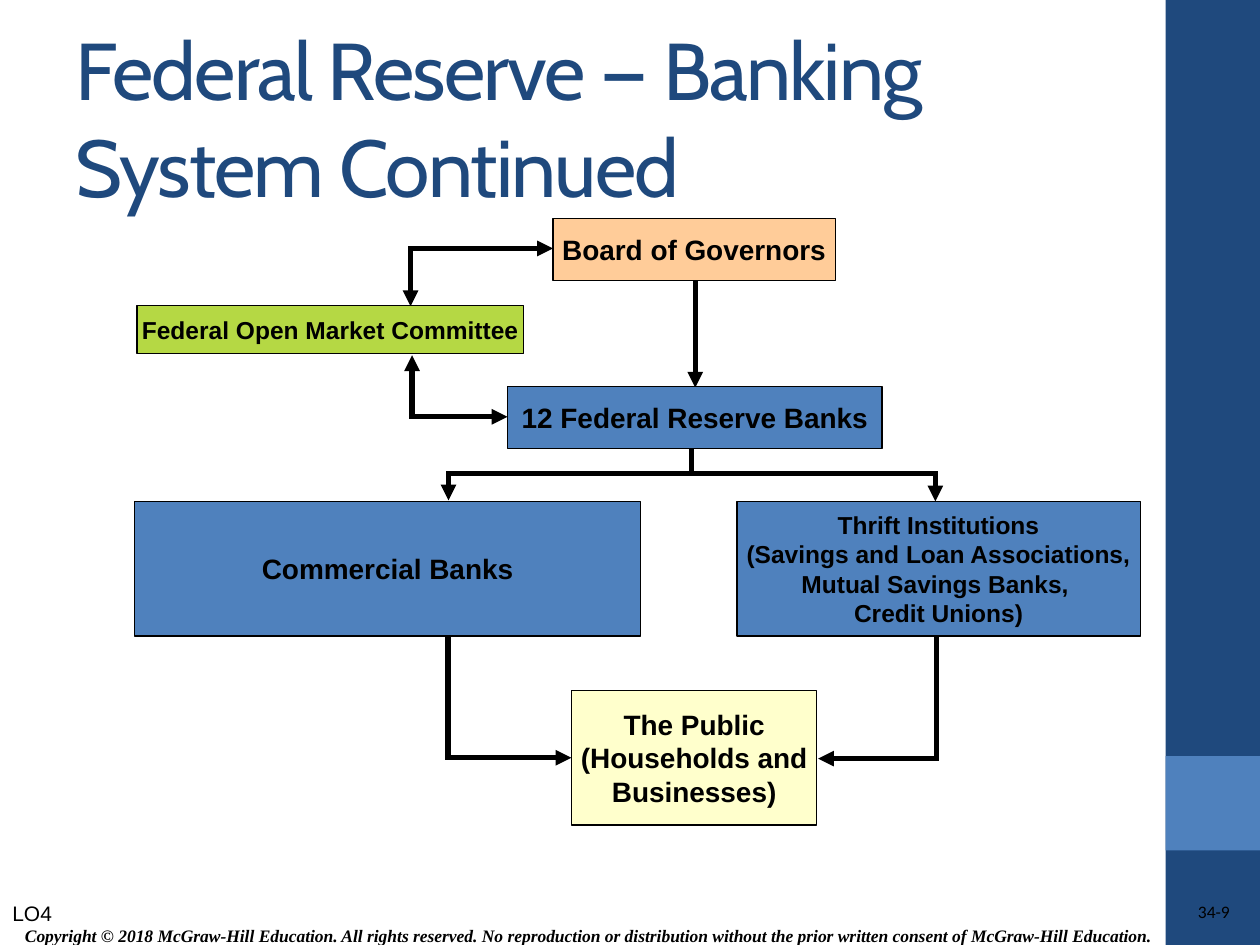
from itertools import pairwise

from lxml.etree import SubElement
from pptx import Presentation
from pptx.dml.color import RGBColor
from pptx.enum.shapes import MSO_CONNECTOR, MSO_SHAPE
from pptx.enum.text import MSO_ANCHOR, PP_ALIGN
from pptx.oxml.ns import qn
from pptx.util import Pt

# Content: flow chart boxes as (lines, left, top, width, height, fill, size)
BOXES = [
    (["Commercial Banks"], 77, 286.5, 289, 77, "blue", "box"),
    (["Thrift Institutions", "(Savings and Loan Associations,",
      "Mutual Savings Banks, ", "Credit Unions)"],
     421.2, 286.5, 230.4, 77, "blue", "small"),
    (["The Public", "(Households and", "Businesses)"],
     326.7, 394.5, 140, 77, "yellow", "box"),
    (["12 Federal Reserve Banks"], 290, 221, 214, 35.3, "blue", "box"),
    (["Board of Governors"], 316, 125, 161.3, 35.3, "orange", "box"),
    (["Federal Open Market Committee"], 78.3, 174.7, 221, 27.4, "green", "small"),
]

# Routes as (corner points, arrow at start, arrow at end)
ROUTES = [
    ([(397.3, 160), (397.3, 221.5)], False, True),
    ([(316, 142), (234.6, 142), (234.6, 175)], True, True),
    ([(290, 238.2), (235.5, 238.2), (235.5, 203)], True, True),
    ([(395.3, 256), (395.3, 270.5), (256.3, 270.5), (256.3, 286)], False, True),
    ([(395.3, 270.5), (534.5, 270.5), (534.5, 286.5)], False, True),
    ([(256, 363), (256, 433), (326.5, 433)], False, True),
    ([(535, 362.5), (535, 433.5), (467.5, 433.5)], False, True),
]

# Side band: (top, height, fill)
BANDS = [(0, 540, "navy"), (432, 54, "blue")]

COPYRIGHT = ("Copyright © 2018 McGraw-Hill Education. All rights reserved. "
             "No reproduction or distribution without the prior written "
             "consent of McGraw-Hill Education.")

THEME = {
    "colors": {"navy": "1F497D", "blue": "4F81BD", "yellow": "FFFFCC",
               "orange": "FFCC99", "green": "B5D844", "black": "000000"},
    "text": {
        "title": {"name": "Cabin", "size": Pt(46)},
        "box": {"name": "Arial", "size": Pt(16), "bold": True},
        "small": {"name": "Arial", "size": Pt(14), "bold": True},
        "label": {"name": "Arial", "size": Pt(12)},
        "copyright": {"name": "Times New Roman", "size": Pt(10),
                      "bold": True, "italic": True},
        "number": {"name": "Calibri", "size": Pt(10)},
    },
    "border": Pt(0.75),
    "route": Pt(3),
}


def color(name):
    return RGBColor.from_string(THEME["colors"][name])


def write(sp, lines, style, align, anchor, wrap, ink="black", inset=None):
    tf = sp.text_frame
    tf.word_wrap = wrap
    tf.vertical_anchor = anchor
    if inset is not None:
        for side in ("left", "right", "top", "bottom"):
            setattr(tf, f"margin_{side}", Pt(inset))
    for i, line in enumerate(lines):
        p = tf.add_paragraph() if i else tf.paragraphs[0]
        p.alignment = align
        r = p.add_run()
        r.text = line
        for key, value in THEME["text"][style].items():
            setattr(r.font, key, value)
        r.font.color.rgb = color(ink)
    return tf


def add_rect(s, x, y, w, h, fill, border=False):
    sp = s.shapes.add_shape(MSO_SHAPE.RECTANGLE, Pt(x), Pt(y), Pt(w), Pt(h))
    sp.shadow.inherit = False
    sp.fill.solid()
    sp.fill.fore_color.rgb = color(fill)
    if border:
        sp.line.color.rgb = color("black")
        sp.line.width = THEME["border"]
    else:
        sp.line.fill.background()
    return sp


def add_text(s, x, y, w, h, *args, **kwargs):
    sp = s.shapes.add_textbox(Pt(x), Pt(y), Pt(w), Pt(h))
    return write(sp, *args, **kwargs)


def add_segment(s, start, end, head, tail):
    sp = s.shapes.add_connector(MSO_CONNECTOR.STRAIGHT, *map(Pt, start + end))
    sp.line.color.rgb = color("black")
    sp.line.width = THEME["route"]
    ln = sp.line._get_or_add_ln()
    ln.set("cap", "sq")  # square ends close the corners
    for tag, shown in (("a:headEnd", head), ("a:tailEnd", tail)):
        if shown:
            SubElement(ln, qn(tag), type="triangle")
    SubElement(sp._element.spPr, qn("a:effectLst"))


def main():
    prs = Presentation()
    prs.slide_width, prs.slide_height = Pt(720), Pt(540)
    s = prs.slides.add_slide(prs.slide_layouts[6])

    # Side band
    for top, height, fill in BANDS:
        add_rect(s, 666, top, 54, height, fill)

    # Title
    tf = add_text(s, 36, 21.6, 600, 90,
                  ["Federal Reserve — Banking System Continued"], "title",
                  PP_ALIGN.LEFT, MSO_ANCHOR.MIDDLE, True, ink="navy")
    tf.paragraphs[0].runs[0].font._element.set("spc", "-100")

    # Routes, then the boxes they join
    for points, at_start, at_end in ROUTES:
        last = len(points) - 2
        for i, (start, end) in enumerate(pairwise(points)):
            add_segment(s, start, end, at_start and i == 0, at_end and i == last)
    for lines, x, y, w, h, fill, style in BOXES:
        sp = add_rect(s, x, y, w, h, fill, border=True)
        write(sp, lines, style, PP_ALIGN.CENTER, MSO_ANCHOR.MIDDLE, False)

    # Footer
    add_text(s, 0, 511.2, 77, 21.8, ["LO4"], "label",
             PP_ALIGN.LEFT, MSO_ANCHOR.TOP, True)
    add_text(s, 4, 524.4, 664, 20, [COPYRIGHT], "copyright",
             PP_ALIGN.CENTER, MSO_ANCHOR.MIDDLE, False)
    add_text(s, 562.3, 514.8, 140.4, 14.4, ["34-9"], "number",
             PP_ALIGN.RIGHT, MSO_ANCHOR.TOP, True, inset=0)

    prs.save("out.pptx")


if __name__ == "__main__":
    main()
